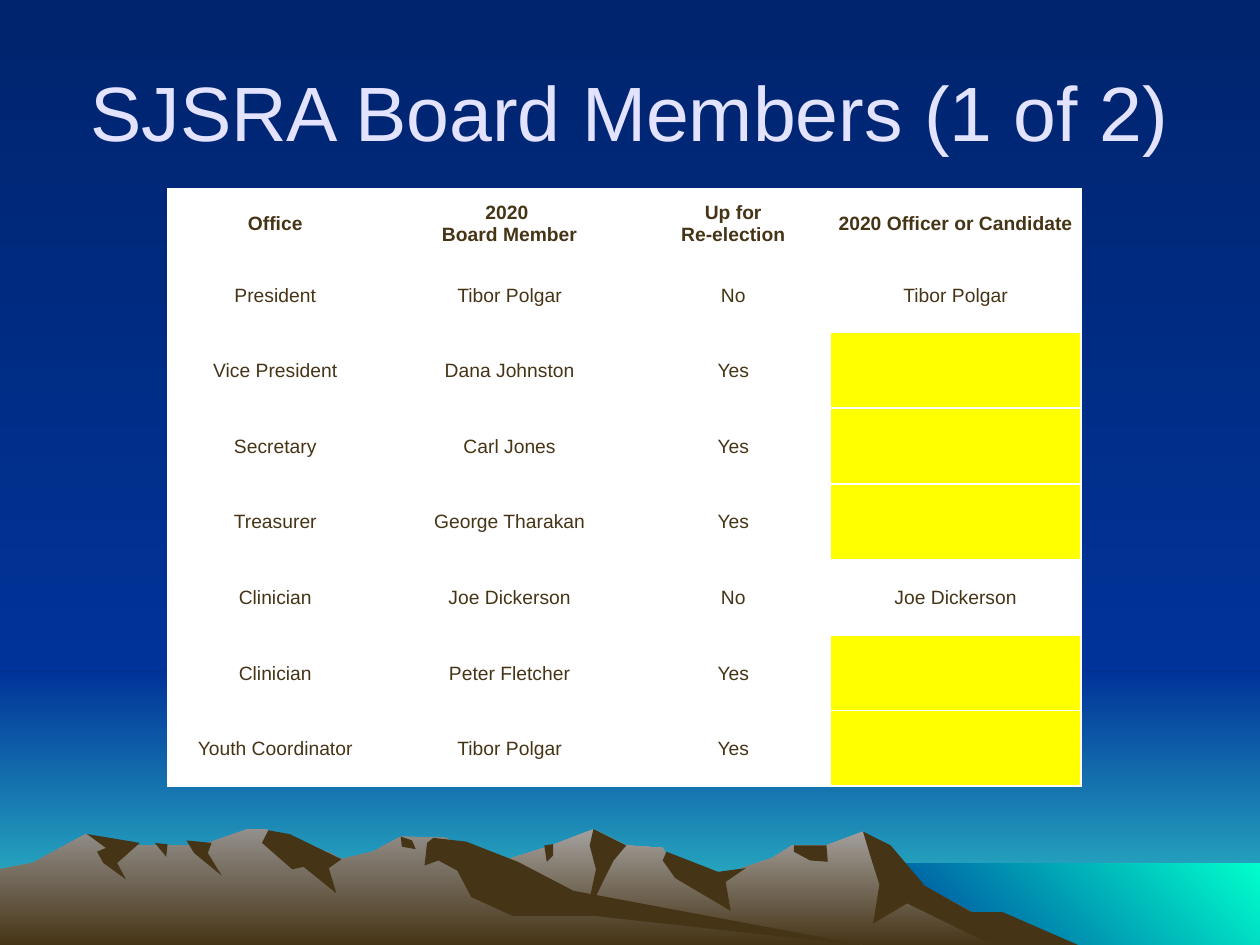
from lxml.etree import SubElement
from pptx import Presentation
from pptx.dml.color import RGBColor as RGB
from pptx.enum.shapes import MSO_SHAPE as SHAPE
from pptx.enum.text import MSO_ANCHOR as ANCHOR, PP_ALIGN as ALIGN
from pptx.oxml.ns import qn
from pptx.util import Pt

PX = 9144  # EMU per px, 100 px to the inch
WIDTH, HEIGHT, HORIZON = 1000, 750, 533
FONT = "Arial"
COLORS = {
    "navy": "003399", "teal": "33CCCC", "aqua": "00FFCC", "rock": "463416",
    "title": "E3E3FF", "white": "FFFFFF", "open": "FFFF00",
}


def paint_gradient(fill, element, start, end, angle=270, tone=None):
    """Two-stop gradient; tone is a (tint or shade, amount) on the first stop."""
    fill.gradient()
    fill.gradient_angle = angle
    for stop, name in zip(fill.gradient_stops, (start, end)):
        stop.color.rgb = RGB.from_string(COLORS[name])
    if tone:
        first = next(element.iter(qn("a:srgbClr")))
        SubElement(first, qn("a:" + tone[0]), val=str(tone[1]))


def style(paragraph, size, color, bold=False):
    paragraph.alignment = ALIGN.CENTER
    font = paragraph.font
    font.name, font.size, font.bold = FONT, Pt(size), bold
    font.color.rgb = RGB.from_string(COLORS[color])


prs = Presentation()
prs.slide_width, prs.slide_height = WIDTH * PX, HEIGHT * PX
slide = prs.slides.add_slide(prs.slide_layouts[6])

# Gradients: start, end, angle, tone
NIGHT = ("navy", "navy", 270, ("shade", 46275))
DUSK = ("navy", "teal")
SEA = ("navy", "aqua", 45)
FAR_RIDGE = ("rock", "rock", 270, ("tint", 66667))
NEAR_RIDGE = ("rock", "rock", 270, ("tint", 75400))
SHADOW = None  # plain rock colour

paint_gradient(slide.background.fill, slide.element, *NIGHT)

# Sky and sea
for gradient, left, top, bottom in [
    (DUSK, 0, HORIZON, HEIGHT),
    (NIGHT, 0, 0, HORIZON),
    (SEA, 683, 685, 752),
]:
    band = slide.shapes.add_shape(
        SHAPE.RECTANGLE, left * PX, top * PX, (WIDTH - left) * PX, (bottom - top) * PX)
    band.shadow.inherit = False
    band.line.fill.background()
    paint_gradient(band.fill, band.element, *gradient)

# Mountain outlines, from back to front
mountains = [
    # Right-hand ridge and its shadows
    (FAR_RIDGE, [
        (258, 751), (394, 685), (438, 671), (471, 658), (497, 671), (526, 673),
        (536, 690), (566, 697), (613, 681), (629, 671), (656, 671), (685, 660),
        (723, 698), (821, 751)]),
    (SHADOW, [
        (685, 660), (691, 680), (698, 702), (693, 733), (720, 717), (792, 752),
        (858, 751), (796, 724), (771, 724), (734, 703), (707, 671)]),
    (SHADOW, [
        (471, 658), (468, 671), (473, 690), (465, 727), (487, 683), (497, 671)]),
    (SHADOW, [(529, 676), (526, 683), (536, 697), (580, 723), (576, 700),
              (592, 689), (570, 692)]),
    (SHADOW, [(630, 671), (630, 676), (643, 683), (657, 684), (656, 671)]),
    (SHADOW, [(432, 671), (439, 670), (439, 679), (434, 684)]),
    # Left-hand ridge and its shadows
    (NEAR_RIDGE, [
        (0, 751), (0, 690), (26, 685), (68, 662), (94, 671), (160, 671),
        (196, 658), (212, 658), (236, 681), (260, 676), (271, 682), (296, 676),
        (318, 664), (354, 665), (432, 712), (690, 751)]),
    (SHADOW, [
        (213, 659), (208, 669), (232, 690), (241, 688), (267, 709), (261, 689),
        (271, 682), (230, 662)]),
    (SHADOW, [
        (344, 665), (339, 669), (337, 687), (348, 683), (363, 691), (374, 712),
        (407, 727), (472, 727), (690, 751), (455, 707), (411, 684), (370, 668)]),
    (SHADOW, [(318, 664), (327, 667), (330, 674), (319, 672)]),
    (SHADOW, [(148, 667), (168, 669), (165, 677), (176, 695), (154, 677)]),
    (SHADOW, [(123, 669), (133, 670), (132, 680)]),
    (SHADOW, [
        (69, 662), (84, 673), (77, 676), (82, 685), (100, 698), (93, 685),
        (111, 669)]),
]
for gradient, outline in mountains:
    builder = slide.shapes.build_freeform(*outline[0], scale=PX)
    builder.add_line_segments(outline[1:], close=True)
    slope = builder.convert_to_shape()
    slope.shadow.inherit = False
    slope.line.fill.background()
    if gradient:
        paint_gradient(slope.fill, slope.element, *gradient)
    else:
        slope.fill.solid()
        slope.fill.fore_color.rgb = RGB.from_string(COLORS["rock"])

# Title
heading = slide.shapes.add_textbox(50 * PX, 25 * PX, 900 * PX, 125 * PX).text_frame
heading.word_wrap = True
heading.vertical_anchor = ANCHOR.MIDDLE
heading.text = "SJSRA Board Members (1 of 2)"
style(heading.paragraphs[0], 44, "title")

# Board table; an empty candidate marks an open seat
board = [
    ("Office", "2020 \vBoard Member", "Up for\vRe-election", "2020 Officer or Candidate"),
    ("President", "Tibor Polgar", "No", "Tibor Polgar"),
    ("Vice President", "Dana Johnston", "Yes", ""),
    ("Secretary", "Carl Jones", "Yes", ""),
    ("Treasurer", "George Tharakan", "Yes", ""),
    ("Clinician", "Joe Dickerson", "No", "Joe Dickerson"),
    ("Clinician", "Peter Fletcher", "Yes", ""),
    ("Youth Coordinator", "Tibor Polgar", "Yes", ""),
]
column_widths = [171, 201, 154, 199]
row_heights = [54] + [60] * 7
members = slide.shapes.add_table(
    len(board), len(column_widths), 133 * PX, 150 * PX,
    sum(column_widths) * PX, sum(row_heights) * PX).table
members.first_row = members.horz_banding = False
for column, width in zip(members.columns, column_widths):
    column.width = width * PX
for row, height in zip(members.rows, row_heights):
    row.height = height * PX

for r, entries in enumerate(board):
    for c, entry in enumerate(entries):
        cell = members.cell(r, c)
        cell.margin_left = cell.margin_right = cell.margin_top = PX
        cell.margin_bottom = 0
        cell.vertical_anchor = ANCHOR.MIDDLE
        cell.text_frame.text = entry
        style(cell.text_frame.paragraphs[0], 11, "rock", bold=r == 0)
        # Borders come before the fill in the cell properties
        properties = cell._tc.get_or_add_tcPr()
        for side in ("lnL", "lnR", "lnT", "lnB"):
            border = SubElement(properties, qn("a:" + side), w=str(Pt(1)))
            SubElement(SubElement(border, qn("a:solidFill")), qn("a:srgbClr"),
                       val=COLORS["white"])
        cell.fill.solid()
        cell.fill.fore_color.rgb = RGB.from_string(COLORS["white" if entry else "open"])

prs.save("out.pptx")
